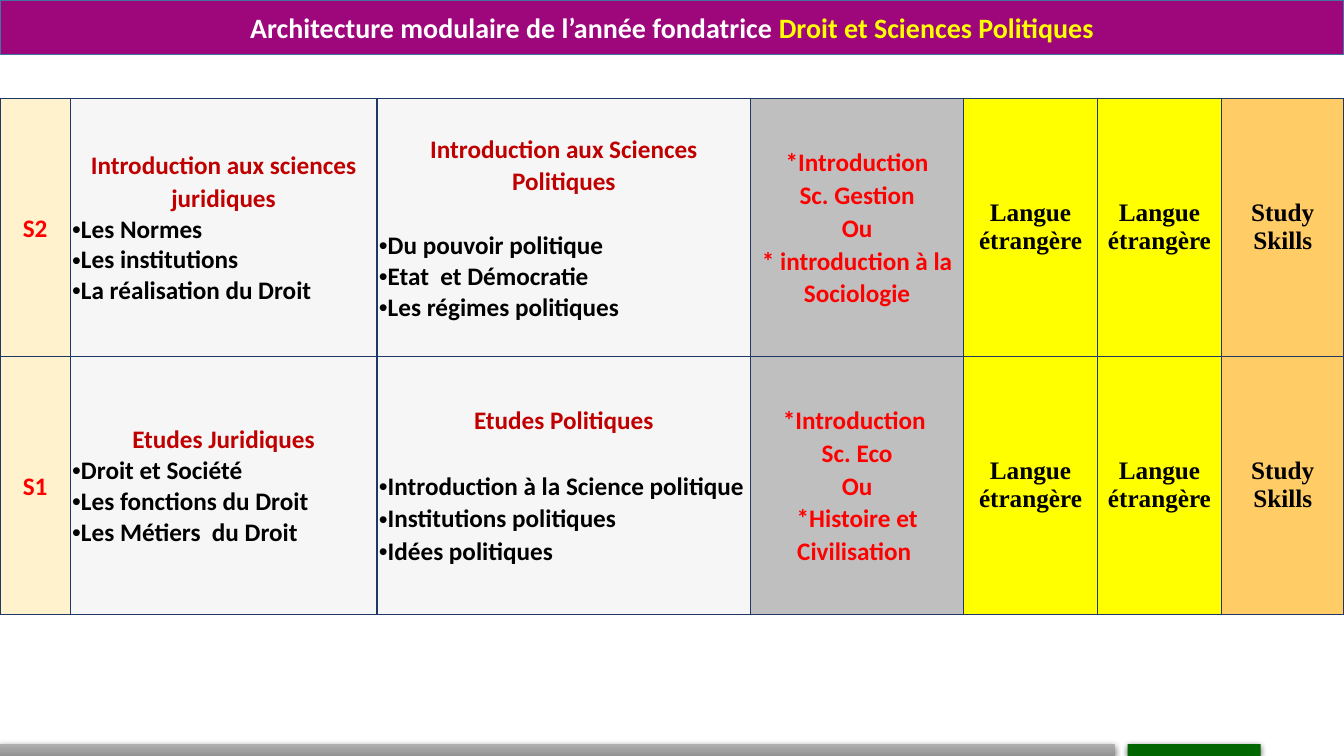
from lxml import etree
from pptx import Presentation
from pptx.dml.color import RGBColor
from pptx.enum.shapes import MSO_SHAPE
from pptx.enum.text import MSO_ANCHOR, PP_ALIGN
from pptx.oxml.ns import qn
from pptx.util import Cm, Pt

RECTANGLE = MSO_SHAPE.RECTANGLE
MIDDLE = MSO_ANCHOR.MIDDLE
CENTER = PP_ALIGN.CENTER
LEFT = PP_ALIGN.LEFT

WHITE = RGBColor(0xFF, 0xFF, 0xFF)
BLACK = RGBColor(0x00, 0x00, 0x00)
RED = RGBColor(0xFF, 0x00, 0x00)
DARK_RED = RGBColor(0xC0, 0x00, 0x00)
YELLOW = RGBColor(0xFF, 0xFF, 0x00)
CREAM = RGBColor(0xFF, 0xF2, 0xCC)
PALE_GREY = RGBColor(0xF6, 0xF6, 0xF6)
GREY = RGBColor(0xBF, 0xBF, 0xBF)
ORANGE = RGBColor(0xFF, 0xCC, 0x66)
PURPLE = RGBColor(0x9E, 0x06, 0x7C)
BLUE = RGBColor(0x43, 0x73, 0x9E)
NAVY = RGBColor(0x1F, 0x38, 0x64)
GREEN = RGBColor(0x00, 0x66, 0x00)
BAR_LIGHT = RGBColor(0xAF, 0xAF, 0xAF)
BAR_DARK = RGBColor(0x93, 0x93, 0x93)

SANS = "Calibri"
SERIF = "Times New Roman"
BULLET_FONT = "Arial"
LOOSE = 1.07
SLIDE_WIDTH = Cm(33.87)
COLUMN_WIDTHS = (1.77, 7.73, 9.42, 5.36, 3.38, 3.12, 3.09)
COLUMN_FILLS = (CREAM, PALE_GREY, PALE_GREY, GREY, YELLOW, YELLOW, ORANGE)
ROW_HEIGHT = Cm(6.5)

SEMESTERS = (
    {
        "name": "S2",
        "law": ("Introduction aux sciences juridiques",
                ("Les Normes", "Les institutions", "La réalisation du Droit")),
        "politics": ("Introduction aux Sciences Politiques",
                     ("Du pouvoir politique", "Etat  et Démocratie",
                      "Les régimes politiques")),
        "politics_spacing": 1.0,
        "options": ("*Introduction", "Sc. Gestion", "Ou",
                    "* introduction à la Sociologie"),
    },
    {
        "name": "S1",
        "law": ("Etudes Juridiques",
                ("Droit et Société", "Les fonctions du Droit",
                 "Les Métiers  du Droit")),
        "politics": ("Etudes Politiques",
                     ("Introduction à la Science politique",
                      "Institutions politiques", "Idées politiques")),
        "politics_spacing": LOOSE,
        "options": ("*Introduction ", "Sc. Eco", "Ou",
                    "*Histoire et Civilisation "),
    },
)


def add_span(para, text, color=BLACK, size=18, font=SANS):
    span = para.add_run()
    span.text = text
    span.font.name = font
    span.font.size = Pt(size)
    span.font.bold = True
    span.font.color.rgb = color


def line_item(text, align=CENTER, spacing=LOOSE, bullet=False, gap=0, **style):
    return {"text": text, "align": align, "spacing": spacing,
            "bullet": bullet, "gap": gap, "style": style}


def write_lines(frame, lines):
    for index, line in enumerate(lines):
        para = frame.paragraphs[0] if index == 0 else frame.add_paragraph()
        para.alignment = line["align"]
        para.line_spacing = line["spacing"]
        para.space_after = Pt(line["gap"])
        if line["bullet"]:
            properties = para._p.get_or_add_pPr()
            properties.set("marL", "0")
            properties.set("indent", "0")
            etree.SubElement(properties, qn("a:buFont"), typeface=BULLET_FONT)
            etree.SubElement(properties, qn("a:buChar"), char="•")
        add_span(para, line["text"], **line["style"])


def course_lines(heading, topics, spacing=1.0, gap=0):
    title = line_item(heading, color=DARK_RED, gap=gap)
    return [title] + [line_item(topic, LEFT, spacing, bullet=True)
                      for topic in topics]


def semester_cells(semester):
    language = [line_item("Langue étrangère", spacing=1.0, font=SERIF)]
    return (
        [line_item(semester["name"], color=RED)],
        course_lines(*semester["law"]),
        course_lines(*semester["politics"],
                     spacing=semester["politics_spacing"], gap=23.5),
        [line_item(option, color=RED) for option in semester["options"]],
        language,
        language,
        [line_item("Study Skills", spacing=1.0, font=SERIF)],
    )


def set_borders(cell):
    properties = cell._tc.get_or_add_tcPr()
    for side in ("a:lnL", "a:lnR", "a:lnT", "a:lnB"):
        border = etree.SubElement(properties, qn(side), w=str(Pt(1)))
        fill = etree.SubElement(border, qn("a:solidFill"))
        etree.SubElement(fill, qn("a:srgbClr"), val=str(NAVY))


def format_cell(cell, lines, color, margin):
    set_borders(cell)
    cell.fill.solid()
    cell.fill.fore_color.rgb = color
    cell.vertical_anchor = MIDDLE
    cell.margin_left = cell.margin_right = margin
    cell.margin_top = cell.margin_bottom = margin
    write_lines(cell.text_frame, lines)


def add_modules(page):
    table = page.shapes.add_table(
        len(SEMESTERS), len(COLUMN_WIDTHS), 0, Cm(2.48),
        SLIDE_WIDTH, ROW_HEIGHT * len(SEMESTERS)).table
    table.first_row = False
    table.horz_banding = False
    for column, width in zip(table.columns, COLUMN_WIDTHS):
        column.width = Cm(width)
    for row, semester in zip(table.rows, SEMESTERS):
        row.height = ROW_HEIGHT
        for cell, lines, color in zip(row.cells, semester_cells(semester),
                                      COLUMN_FILLS):
            margin = Cm(0.1) if color == ORANGE else Cm(0.05)
            format_cell(cell, lines, color, margin)


def add_bar(page, left, top, width, height, color):
    bar = page.shapes.add_shape(RECTANGLE, left, top, width, height)
    bar.shadow.inherit = False
    bar.fill.solid()
    bar.fill.fore_color.rgb = color
    bar.line.fill.background()
    return bar


def add_shadow(bar):
    effects = bar._element.spPr.find(qn("a:effectLst"))
    shadow = etree.SubElement(effects, qn("a:outerShdw"), blurRad=str(Pt(4.5)),
                              dist=str(Pt(1.5)), dir="5400000", rotWithShape="0")
    tint = etree.SubElement(shadow, qn("a:srgbClr"), val=str(BLACK))
    etree.SubElement(tint, qn("a:alpha"), val="63000")


def add_footer(page):
    top, height = Cm(18.75), Cm(0.3)
    green_bar = add_bar(page, Cm(28.42), top, Cm(3.35), height, GREEN)
    grey_bar = add_bar(page, 0, top, Cm(28.09), height, BAR_LIGHT)
    grey_bar.fill.gradient()
    grey_bar.fill.gradient_angle = 270
    for stop, color in zip(grey_bar.fill.gradient_stops, (BAR_LIGHT, BAR_DARK)):
        stop.color.rgb = color
    for bar in (green_bar, grey_bar):
        add_shadow(bar)


def add_title(page):
    banner = add_bar(page, 0, 0, SLIDE_WIDTH, Cm(1.37), PURPLE)
    banner.line.color.rgb = BLUE
    banner.line.width = Pt(1)
    frame = banner.text_frame
    frame.word_wrap = True
    frame.vertical_anchor = MIDDLE
    para = frame.paragraphs[0]
    para.alignment = CENTER
    add_span(para, "Architecture modulaire de l’année fondatrice ",
             color=WHITE, size=20)
    add_span(para, "Droit et Sciences Politiques", color=YELLOW, size=20)


def main():
    deck = Presentation()
    deck.slide_width = SLIDE_WIDTH
    deck.slide_height = Cm(19.05)
    page = deck.slides.add_slide(deck.slide_layouts[6])
    add_footer(page)
    add_modules(page)
    add_title(page)
    deck.save("out.pptx")


if __name__ == "__main__":
    main()
